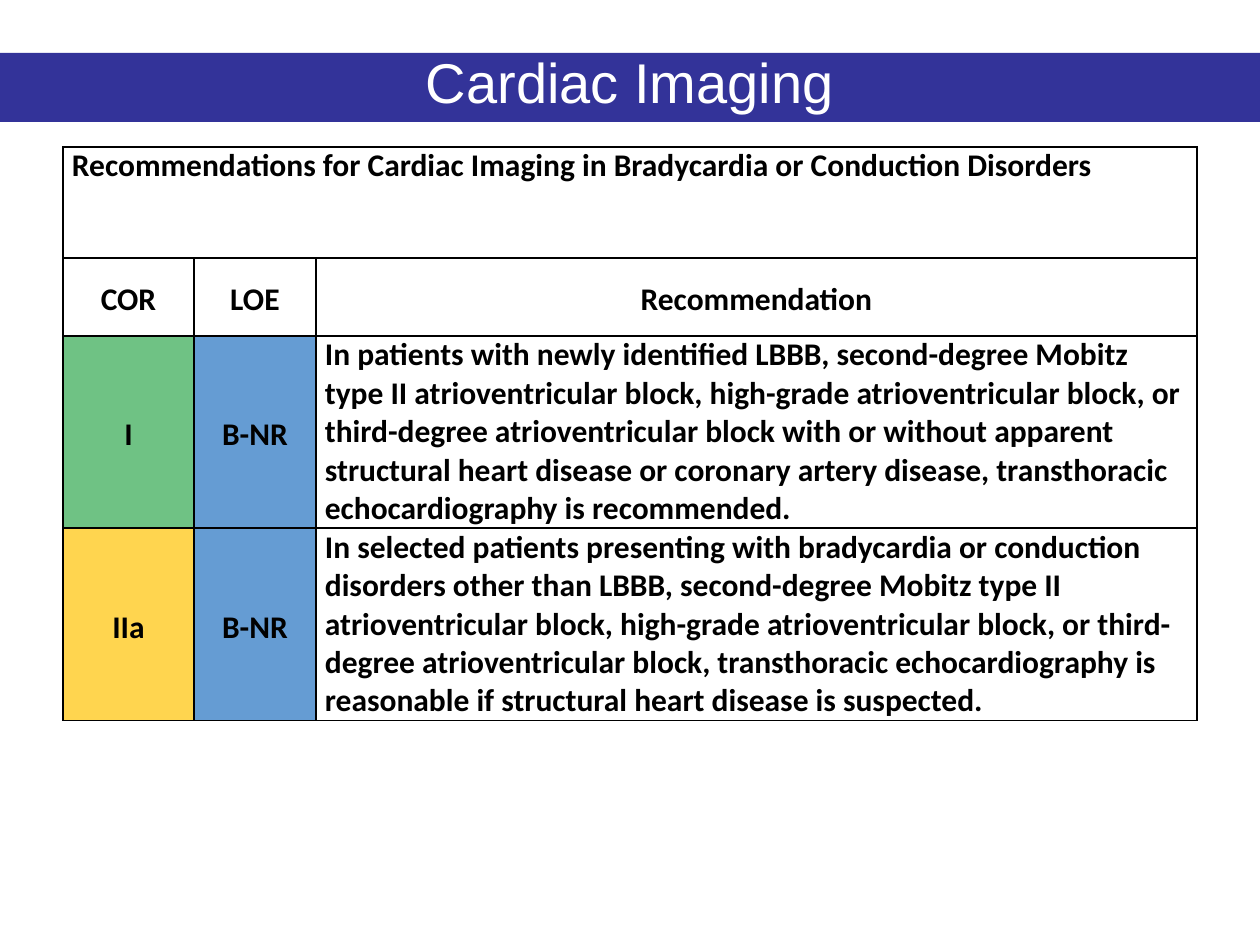
from lxml.etree import SubElement
from pptx import Presentation
from pptx.dml.color import RGBColor
from pptx.enum.shapes import MSO_SHAPE as Shape
from pptx.enum.text import MSO_ANCHOR as Anchor, PP_ALIGN as Align
from pptx.oxml.ns import qn
from pptx.util import Pt

PX = 914400 // 126


def color(value):
    return RGBColor.from_string(value)


def write(frame, text, size, font, ink, **layout):
    para = frame.paragraphs[0]
    for name, value in layout.items():
        setattr(para, name, value)
    span = para.add_run()
    span.text = text
    for name, value in {"size": Pt(size), "name": font, "bold": font == "Calibri"}.items():
        setattr(span.font, name, value)
    span.font.color.rgb = color(ink)


deck = Presentation()
deck.slide_width, deck.slide_height = 1260 * PX, 945 * PX
page = deck.slides.add_slide(deck.slide_layouts[6])

# Title band
band = page.shapes.add_shape(Shape.RECTANGLE, 0, 53 * PX, 1260 * PX, 69 * PX)
band.shadow.inherit = False
band.fill.solid()
band.fill.fore_color.rgb = color("333399")
band.line.fill.background()
band.text_frame.word_wrap = True
band.text_frame.vertical_anchor = Anchor.MIDDLE
write(band.text_frame, "Cardiac Imaging", 32, "Arial", "FFFFFF",
      alignment=Align.CENTER, line_spacing=0.8)

# Recommendation table
rows = [
    ["Recommendations for Cardiac Imaging in Bradycardia or Conduction Disorders", "", ""],
    ["COR", "LOE", "Recommendation"],
    ["I", "B-NR",
     "In patients with newly identified LBBB, second-degree Mobitz type II "
     "atrioventricular block, high-grade atrioventricular block, or third-degree "
     "atrioventricular block with or without apparent structural heart disease or "
     "coronary artery disease, transthoracic echocardiography is recommended."],
    ["IIa", "B-NR",
     "In selected patients presenting with bradycardia or conduction disorders other "
     "than LBBB, second-degree Mobitz type II atrioventricular block, high-grade "
     "atrioventricular block, or third-degree atrioventricular block, transthoracic "
     "echocardiography is reasonable if structural heart disease is suspected."],
]
fills = {(2, 0): "6FC284", (2, 1): "659CD3", (3, 0): "FFD54F", (3, 1): "659CD3"}
widths = [131, 122, 881]
heights = [111, 78, 189, 189]

table = page.shapes.add_table(len(rows), len(widths), 63 * PX, 147 * PX,
                              sum(widths) * PX, sum(heights) * PX).table
table.first_row = table.horz_banding = False
for column, width in zip(table.columns, widths):
    column.width = width * PX
for row, height in zip(table.rows, heights):
    row.height = height * PX
table.cell(0, 0).merge(table.cell(0, 2))

for r, texts in enumerate(rows):
    for c, text in enumerate(texts):
        cell = table.cell(r, c)
        centred = r == 1 or (r > 1 and c < 2)
        layout = {
            "margin_left": 9 * PX, "margin_right": 9 * PX,
            "margin_top": 0, "margin_bottom": 0,
            "vertical_anchor": Anchor.MIDDLE if centred else Anchor.TOP,
        }
        for name, value in layout.items():
            setattr(cell, name, value)

        # Borders come before the fill in the cell properties
        props = cell._tc.get_or_add_tcPr()
        for side in ("a:lnL", "a:lnR", "a:lnT", "a:lnB"):
            border = SubElement(props, qn(side), w=str(Pt(1)))
            paint = SubElement(border, qn("a:solidFill"))
            SubElement(paint, qn("a:srgbClr"), val="000000")
        if (r, c) in fills:
            cell.fill.solid()
            cell.fill.fore_color.rgb = color(fills[r, c])
        else:
            cell.fill.background()

        if text:
            write(cell.text_frame, text, 18, "Calibri", "000000",
                  alignment=Align.CENTER if centred else Align.LEFT,
                  line_spacing=1.15 if centred else 1.0)

deck.save("out.pptx")
